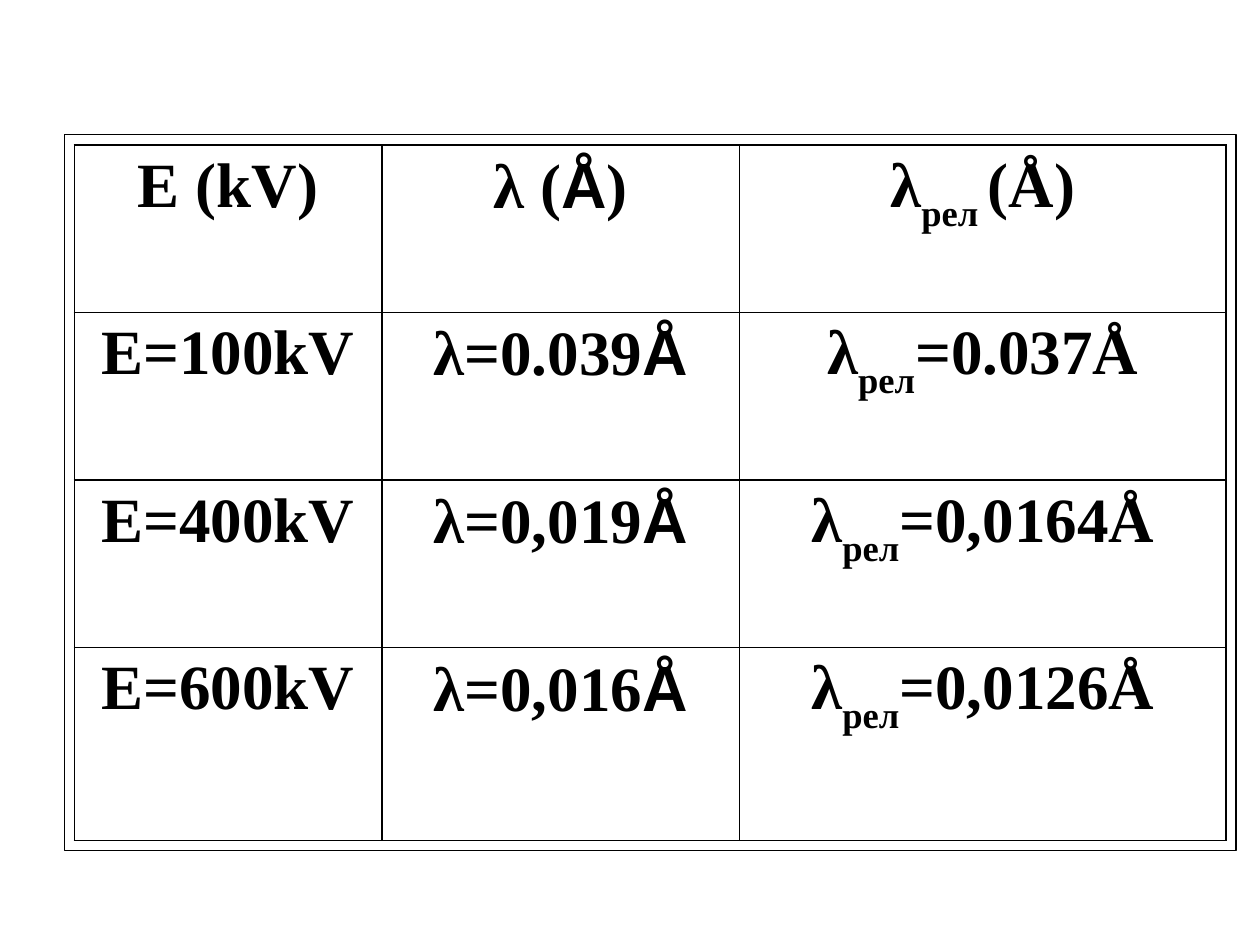
from lxml.etree import SubElement
from pptx import Presentation
from pptx.dml.color import RGBColor
from pptx.enum.shapes import MSO_SHAPE
from pptx.enum.text import PP_ALIGN
from pptx.oxml.ns import qn
from pptx.util import Inches, Pt

SERIF, SANS = "Times New Roman", "Arial"
INK, PAPER = "000000", "FFFFFF"
COLS = (2.44, 2.84, 3.86)
ROWS = (1.33, 1.33, 1.33, 1.53)
GAP = 0.08
HEAD = ("E (kV)", " (", ")", "рел ", "(Å)")
DATA = (("100", "0.039", "0.037"),
        ("400", "0,019", "0,0164"),
        ("600", "0,016", "0,0126"))


def color(code):
    return RGBColor.from_string(code)


def add_text(para, text, font=SERIF, size=36, bold=True, ink=INK, base=0):
    run = para.add_run()
    run.text = text
    run.font.name = font
    run.font.size = Pt(size)
    run.font.bold = bold
    run.font.color.rgb = color(ink)
    if base:
        run.font._element.set("baseline", str(base * 1000))


def add_edges(cell, width=1, ink=INK):
    props = cell._tc.get_or_add_tcPr()
    for spot, side in enumerate(("lnL", "lnR", "lnT", "lnB")):
        line = SubElement(props, qn(f"a:{side}"), w=str(Pt(width)))
        fill = SubElement(line, qn("a:solidFill"))
        SubElement(fill, qn("a:srgbClr"), val=ink)
        props.insert(spot, line)


def add_frame(slide, left, top, width, height):
    frame = slide.shapes.add_shape(
        MSO_SHAPE.RECTANGLE, *map(Inches, (left, top, width, height)))
    frame.shadow.inherit = False
    frame.fill.solid()
    frame.fill.fore_color.rgb = color(PAPER)
    frame.line.color.rgb = color(INK)
    frame.line.width = Pt(0.75)


def cell_runs():
    """Give rows of cells, each a list of (text, format) runs."""
    volt, start, end, sub, unit = HEAD
    yield ([(volt, {})],
           [("λ" + start, {}), ("Å", {"font": SANS}), (end, {})],
           [("λ", {}), (sub, {"base": -30}), (unit, {})])
    for volt, wave, rel in DATA:
        yield ([(f"E={volt}kV", {})],
               [(f"λ={wave}", {}), ("Å", {"font": SANS})],
               [("λ", {}), ("рел", {"base": -30}), (f"={rel}Å", {})])


def add_grid(slide, left, top, width, height):
    table = slide.shapes.add_table(
        len(ROWS), len(COLS),
        *map(Inches, (left, top, width, height))).table
    table.first_row = table.horz_banding = False
    for col, size in zip(table.columns, COLS):
        col.width = Inches(size)
    for row, size, cells in zip(table.rows, ROWS, cell_runs()):
        row.height = Inches(size)
        for cell, runs in zip(row.cells, cells):
            cell.fill.solid()
            cell.fill.fore_color.rgb = color(PAPER)
            add_edges(cell)
            para = cell.text_frame.paragraphs[0]
            para.alignment = PP_ALIGN.CENTER
            for text, style in runs:
                add_text(para, text, **style)


def add_panel(slide, left, top):
    """Place the table inside its double border."""
    width, height = sum(COLS), sum(ROWS)
    add_frame(slide, left - GAP, top - GAP, width + 2 * GAP, height + 2 * GAP)
    add_grid(slide, left, top, width, height)


def main():
    deck = Presentation()
    deck.slide_width, deck.slide_height = Inches(10), Inches(7.5)
    slide = deck.slides.add_slide(deck.slide_layouts[6])
    add_panel(slide, 0.59, 1.15)
    deck.save("out.pptx")


if __name__ == "__main__":
    main()
